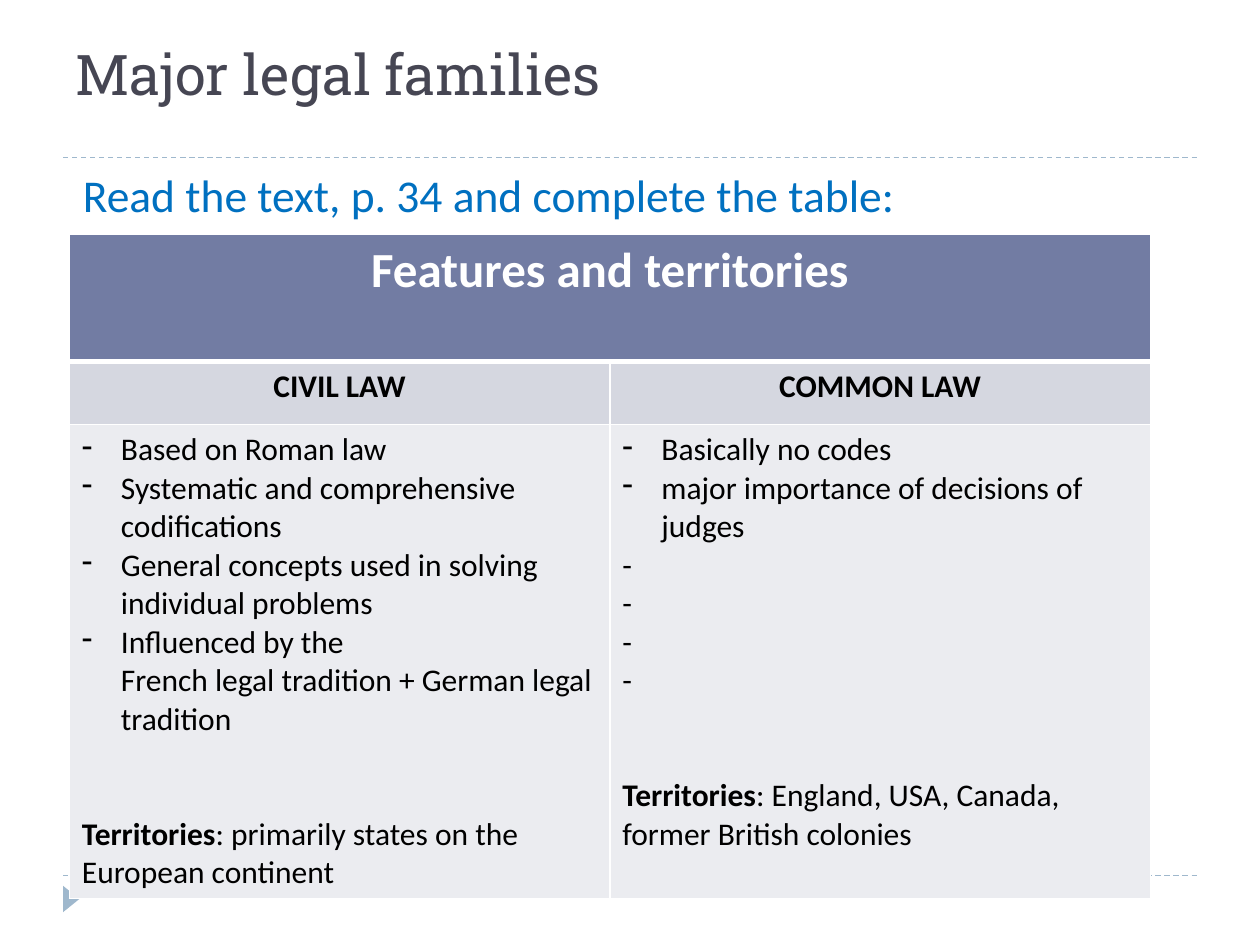
from dataclasses import dataclass

from lxml import etree
from pptx import Presentation
from pptx import util as u
from pptx.dml.color import RGBColor
from pptx.enum import dml, shapes, text
from pptx.oxml import parse_xml
from pptx.oxml.ns import nsdecls, qn

COLUMN = ROW = u.Inches(0.5)


@dataclass(frozen=True)
class Theme:
    """Colours, fonts and type sizes of the slide."""
    title: str = "464653"
    prompt: str = "0070C0"
    accent: str = "9FB8CD"
    header: str = "727CA3"
    subheader: str = "D5D7E0"
    body: str = "EBECF0"
    light: str = "FFFFFF"
    dark: str = "000000"
    heading_font: str = "Roboto Slab"
    body_font: str = "Calibri"
    title_size: int = 32
    prompt_size: int = 26
    header_size: int = 28
    cell_size: int = 18


THEME = Theme()


@dataclass(frozen=True)
class Box:
    """A region measured in grid columns and rows."""
    left: float
    top: float
    width: float
    height: float

    def lengths(self):
        """Return left, top, width and height as lengths."""
        return (int(self.left * COLUMN), int(self.top * ROW),
                int(self.width * COLUMN), int(self.height * ROW))


LAW_FAMILIES = [
    dict(name="CIVIL LAW",
         features=["Based on Roman law",
                   "Systematic and comprehensive codifications",
                   "General concepts used in solving individual problems",
                   "Influenced by the \vFrench legal tradition + German legal tradition"],
         gaps=0,
         territories=": primarily states on the European continent"),
    dict(name="COMMON LAW",
         features=["Basically no codes",
                   "major importance of decisions of judges"],
         gaps=4,
         territories=": England, USA, Canada, former British colonies"),
]


def set_values(target, values):
    """Set each attribute of the target from a dict."""
    for name, value in values.items():
        setattr(target, name, value)


def format_runs(paragraph, size, color, bold=False, font=THEME.body_font):
    """Give every run of a paragraph the same type."""
    for run in paragraph.runs:
        set_values(run.font, dict(name=font, size=u.Pt(size), bold=bold))
        run.font.color.rgb = RGBColor.from_string(color)


def add_rule(slide, box):
    """Draw a dashed rule along the top of the box."""
    left, top, width, _ = box.lengths()
    rule = slide.shapes.add_connector(
        shapes.MSO_CONNECTOR.STRAIGHT, left, top, left + width, top)
    set_values(rule.line, dict(width=u.Pt(0.75), dash_style=dml.MSO_LINE.DASH))
    rule.line.color.rgb = RGBColor.from_string(THEME.accent)
    etree.SubElement(rule._element.spPr, qn("a:effectLst"))


def add_marker(slide, box):
    """Draw the triangle that points into the slide."""
    marker = slide.shapes.add_shape(
        shapes.MSO_SHAPE.ISOSCELES_TRIANGLE, *box.lengths())
    marker.rotation = 90
    marker.shadow.inherit = False
    marker.fill.solid()
    marker.fill.fore_color.rgb = RGBColor.from_string(THEME.accent)
    marker.line.fill.background()


def place_title(slide, box, words):
    """Move and format the title placeholder."""
    title = slide.shapes.title
    set_values(title, dict(zip(("left", "top", "width", "height"), box.lengths())))
    set_values(title.text_frame, dict(
        text=words, word_wrap=True, vertical_anchor=text.MSO_ANCHOR.BOTTOM,
        auto_size=text.MSO_AUTO_SIZE.NONE))
    paragraph = title.text_frame.paragraphs[0]
    paragraph.alignment = text.PP_ALIGN.LEFT
    format_runs(paragraph, THEME.title_size, THEME.title, font=THEME.heading_font)


def add_prompt(slide, box, words):
    """Write the task above the table."""
    frame = slide.shapes.add_textbox(*box.lengths()).text_frame
    set_values(frame, dict(text=words, word_wrap=True))
    format_runs(frame.paragraphs[0], THEME.prompt_size, THEME.prompt)


def style_cell(cell, fill, bottom=1):
    """Give a cell white borders and a plain fill."""
    properties = cell._tc.get_or_add_tcPr()
    for side, points in dict(lnL=1, lnR=1, lnT=1, lnB=bottom).items():
        properties.append(parse_xml(
            f'<a:{side} {nsdecls("a")} w="{u.Pt(points)}"><a:solidFill>'
            f'<a:srgbClr val="{THEME.light}"/></a:solidFill></a:{side}>'))
    cell.fill.solid()
    cell.fill.fore_color.rgb = RGBColor.from_string(fill)


def fill_heading(cell, words, size, color):
    """Write a centred bold heading in a cell."""
    cell.text = words
    paragraph = cell.text_frame.paragraphs[0]
    paragraph.alignment = text.PP_ALIGN.CENTER
    format_runs(paragraph, size, color, bold=True)


def add_dash_bullet(paragraph):
    """Give a paragraph a dash bullet with a hanging indent."""
    properties = paragraph._p.get_or_add_pPr()
    indent = u.Inches(0.31)
    properties.set("marL", str(indent))
    properties.set("indent", str(-indent))
    etree.SubElement(properties, qn("a:buChar"), char="-")


def fill_features(cell, family):
    """List the features, the gaps to complete and the territories."""
    frame = cell.text_frame
    items = family["features"] + ["-"] * family["gaps"]
    frame.text = "\n".join(items)
    for paragraph in frame.paragraphs:
        format_runs(paragraph, THEME.cell_size, THEME.dark)
    for paragraph in frame.paragraphs[:len(family["features"])]:
        add_dash_bullet(paragraph)
    closing = frame.add_paragraph()
    closing.space_before = u.Pt(44)
    for words in ("Territories", family["territories"]):
        closing.add_run().text = words
    format_runs(closing, THEME.cell_size, THEME.dark)
    closing.runs[0].font.bold = True


def add_comparison(slide, box, header, families):
    """Build the table with one column for each legal family."""
    table = slide.shapes.add_table(3, len(families), *box.lengths()).table
    heights = (2.02, 1, box.height - 3.02)
    for row, height in zip(table.rows, heights):
        row.height = int(height * ROW)
    fills = (THEME.header, THEME.subheader, THEME.body)
    for index, (fill, bottom) in enumerate(zip(fills, (3, 1, 1))):
        for cell in table.rows[index].cells:
            style_cell(cell, fill, bottom)
    table.cell(0, 0).merge(table.cell(0, len(families) - 1))
    fill_heading(table.cell(0, 0), header, THEME.header_size, THEME.light)
    for column, family in enumerate(families):
        fill_heading(table.cell(1, column), family["name"], THEME.cell_size, THEME.dark)
        fill_features(table.cell(2, column), family)


def main():
    """Build and save the presentation."""
    presentation = Presentation()
    set_values(presentation, dict(slide_width=20 * COLUMN, slide_height=15 * ROW))
    slide = presentation.slides.add_slide(presentation.slide_layouts[5])
    for top in (13.9, 2.5):
        add_rule(slide, Box(1, top, 18, 0))
    add_marker(slide, Box(0.92, 14.14, 0.42, 0.26))
    place_title(slide, Box(1, 0.34, 18, 1.46), "Major legal families")
    add_prompt(slide, Box(1.12, 2.56, 18, 1.1),
               "Read the text, p. 34 and complete the table:")
    add_comparison(slide, Box(1.1, 3.72, 17.16, 10.54),
                   "Features and territories", LAW_FAMILIES)
    presentation.save("out.pptx")


if __name__ == "__main__":
    main()
